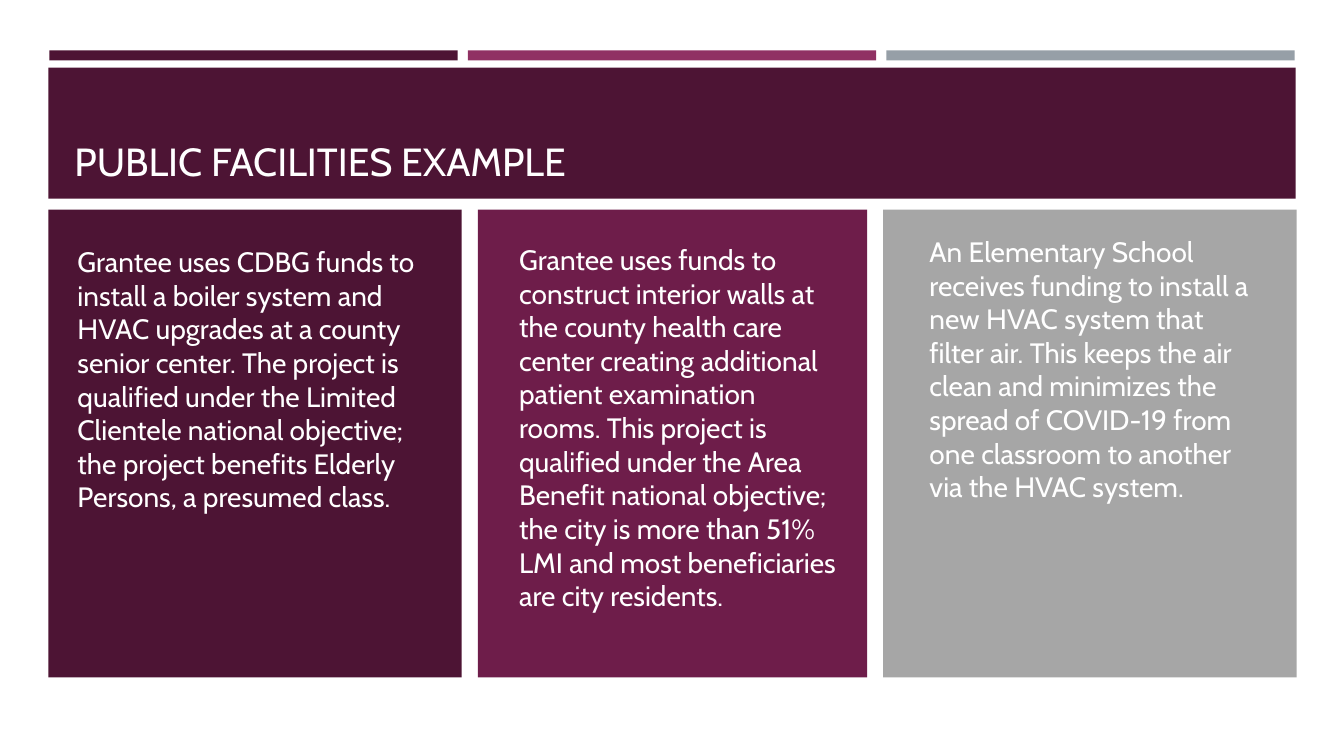
from pptx import Presentation
from pptx.dml.color import RGBColor
from pptx.enum.shapes import MSO_SHAPE
from pptx.enum.text import MSO_ANCHOR
from pptx.util import Inches, Pt

# Content
TITLE = "PUBLIC FACILITIES EXAMPLE"
FONT = "Cabin"
COLORS = {"plum": "4D1434", "rose": "903163", "steel": "969FA7",
          "wine": "6E1D4A", "gray": "A6A6A6", "white": "FFFFFF"}
STRIPES = ["plum", "rose", "steel"]
# Each panel: color, width, text box (left, top, width, height), bottom inset, text
PANELS = [
    ("plum", 4.1, (0.67, 2.3, 3.71, 2.92), 0.05,
     "Grantee uses CDBG funds to install a boiler system and HVAC upgrades "
     "at a county senior center. The project is qualified under the Limited "
     "Clientele national objective; the project benefits Elderly Persons, "
     "a presumed class."),
    ("wine", 3.86, (5.05, 2.3, 3.38, 4.21), 0.38,
     "Grantee uses funds to construct interior walls at the county health "
     "care center creating additional patient examination rooms. This project "
     "is qualified under the Area Benefit national objective; the city is more "
     "than 51% LMI and most beneficiaries are city residents."),
    ("gray", 4.1, (9.12, 2.08, 3.38, 3.16), 0.05,
     "An Elementary School receives funding to install a new HVAC system that "
     "filter air. This keeps the air clean and minimizes the spread of COVID-19 "
     "from one classroom to another via the HVAC system."),
]

# Layout in inches
EDGE, WIDTH = 0.48, 12.37
STRIPE, STEP = 4.05, 4.15
TOP, HEIGHT, GAP = 2.08, 4.64, 0.16

deck = Presentation()
deck.slide_width, deck.slide_height = Inches(13.33), Inches(7.5)
slide = deck.slides.add_slide(deck.slide_layouts[6])


def add_block(box, color):
    block = slide.shapes.add_shape(MSO_SHAPE.RECTANGLE, *map(Inches, box))
    block.shadow.inherit = False
    block.fill.solid()
    block.fill.fore_color.rgb = RGBColor.from_string(COLORS[color])
    block.line.fill.background()


def add_text(box, text, size, anchor, inset=0.05):
    frame = slide.shapes.add_textbox(*map(Inches, box)).text_frame
    frame.word_wrap = True
    frame.vertical_anchor = anchor
    frame.margin_bottom = Inches(inset)
    para = frame.paragraphs[0]
    para.text = text
    para.font.name, para.font.size = FONT, Pt(size)
    para.font.color.rgb = RGBColor.from_string(COLORS["white"])


# Stripes along the top
for col, color in enumerate(STRIPES):
    add_block((EDGE + 0.01 + col * STEP, 0.5, STRIPE, 0.1), color)

# Title band
add_block((EDGE, 0.67, WIDTH, 1.3), "plum")
add_text((0.64, 0.77, 12.06, 1.11), TITLE, 28, MSO_ANCHOR.BOTTOM)

# Example panels
left = EDGE
for color, width, box, inset, text in PANELS:
    add_block((left, TOP, width, HEIGHT), color)
    add_text(box, text, 20, MSO_ANCHOR.MIDDLE, inset)
    left += width + GAP

deck.save("out.pptx")
